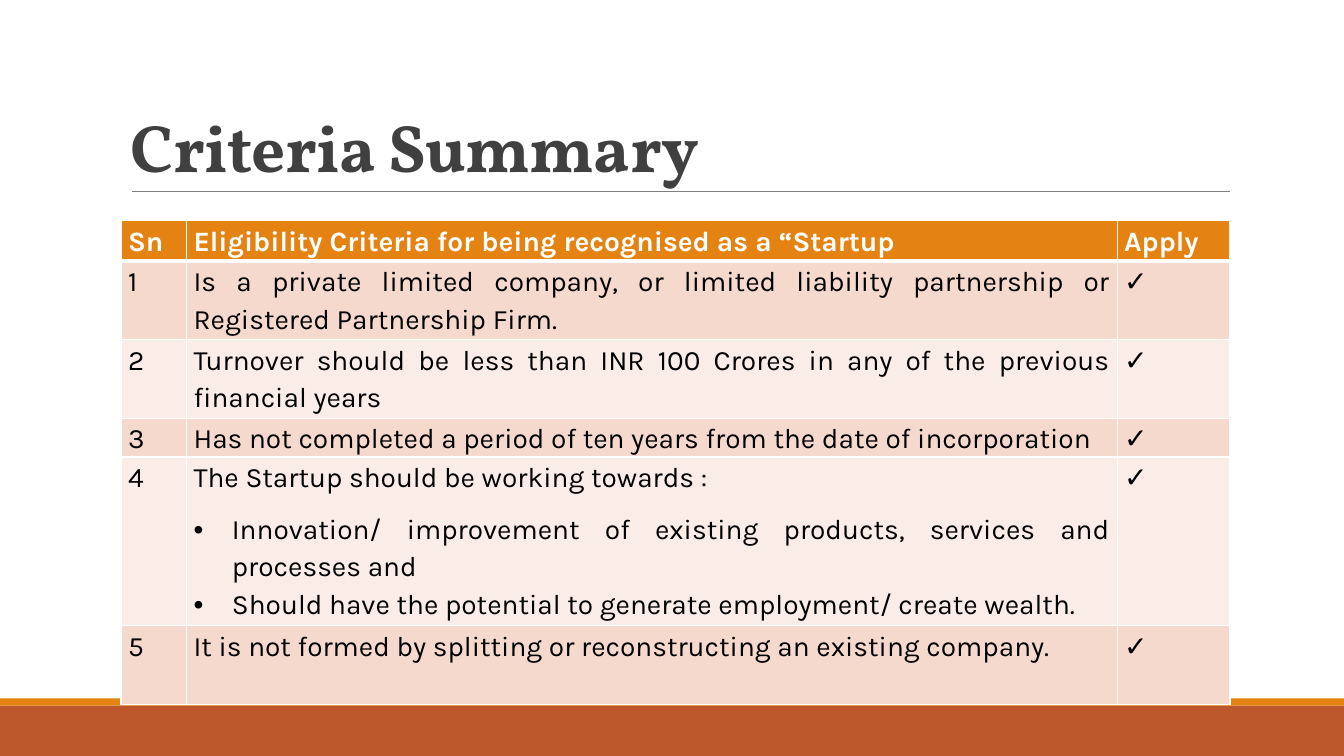
from lxml import etree
from pptx import Presentation
from pptx.dml.color import RGBColor
from pptx.enum.shapes import MSO_CONNECTOR, MSO_SHAPE
from pptx.enum.text import MSO_ANCHOR, PP_ALIGN
from pptx.oxml.ns import qn
from pptx.util import Inches, Pt

# Slide grid, in inches
WIDTH, HEIGHT = 13.33, 7.5
LEFT, CONTENT_WIDTH = 1.2, 11
TITLE_TOP, TITLE_HEIGHT = 0.31, 1.59
TABLE_TOP = 2.19
FOOTER_HEIGHT, STRIP_HEIGHT = 0.57, 0.07
COLUMN_WIDTHS = [0.65, 9.23, 1.12]
ROW_HEIGHTS = [0.4, 0.78, 0.78, 0.38, 1.5, 0.78]
CELL_MARGIN, BULLET_INDENT = 0.07, 0.38

# Border widths, in points
THIN, THICK = 1, 3

WHITE = RGBColor(0xFF, 0xFF, 0xFF)
BLACK = RGBColor(0x00, 0x00, 0x00)
GREY = RGBColor(0x80, 0x80, 0x80)
CHARCOAL = RGBColor(0x40, 0x40, 0x40)
RUST = RGBColor(0xBD, 0x58, 0x2C)
ORANGE = RGBColor(0xE4, 0x83, 0x12)
PEACH = RGBColor(0xF5, 0xD9, 0xCC)
PALE = RGBColor(0xFA, 0xED, 0xE7)

HEADINGS = ["Sn", "Eligibility Criteria for being recognised as a “Startup", "Apply"]
# Each criterion: its statement, then any bullets below it
CRITERIA = [
    ["Is a private limited company, or limited liability partnership or "
     "Registered Partnership Firm."],
    ["Turnover should be less than INR 100 Crores in any of the previous financial years"],
    ["Has not completed a period of ten years from the date of incorporation"],
    ["The Startup should be working towards :",
     "Innovation/ improvement of existing products, services and processes and ",
     "Should have the potential to generate employment/ create wealth. "],
    ["It is not formed by splitting or reconstructing an existing company."],
]


def write(para, text, *, font="Karla", size=20, color=BLACK, bold=False,
          align=PP_ALIGN.JUSTIFY, spacing=1.15, after=10, tracking=0):
    para.alignment, para.line_spacing = align, spacing
    para.space_before, para.space_after = Pt(0), Pt(after)
    span = para.add_run()
    span.text = text
    span.font.name, span.font.size, span.font.bold = font, Pt(size), bold
    span.font.color.rgb = color
    span.font._element.set("spc", str(round(tracking * 100)))


def add_bullet(para):
    props = para._p.get_or_add_pPr()
    props.set("marL", str(Inches(BULLET_INDENT)))
    props.set("indent", str(-Inches(BULLET_INDENT)))
    etree.SubElement(props, qn("a:buFont")).set("typeface", "Arial")
    etree.SubElement(props, qn("a:buChar")).set("char", "•")


def add_borders(cell, top, bottom):
    """Draw white borders: thin at the sides, top and bottom as given."""
    props = cell._tc.get_or_add_tcPr()
    sides = {"a:lnL": THIN, "a:lnR": THIN, "a:lnT": top, "a:lnB": bottom}
    for place, (tag, width) in enumerate(sides.items()):
        line = etree.Element(qn(tag), w=str(Pt(width)))
        fill = etree.SubElement(line, qn("a:solidFill"))
        etree.SubElement(fill, qn("a:srgbClr")).set("val", str(WHITE))
        props.insert(place, line)  # borders must precede the cell's fill


def add_band(page, top, height, color):
    """Plain band across the whole slide."""
    band = page.shapes.add_shape(MSO_SHAPE.RECTANGLE, 0, Inches(top),
                                 Inches(WIDTH), Inches(height))
    band.shadow.inherit = False
    band.fill.solid()
    band.fill.fore_color.rgb = color
    band.line.fill.background()


def add_footer(page, top, height):
    """Rust band with a thin orange strip above it."""
    add_band(page, top + STRIP_HEIGHT, height - STRIP_HEIGHT, RUST)
    add_band(page, top, STRIP_HEIGHT, ORANGE)


def add_title(page, text, left, top, width, height):
    """Bottom-anchored title with a thin rule below it."""
    base = Inches(top + height)
    rule = page.shapes.add_connector(MSO_CONNECTOR.STRAIGHT, Inches(left + 0.11), base,
                                     Inches(left + width), base)
    rule.line.color.rgb, rule.line.width = GREY, Pt(0.5)
    etree.SubElement(rule._element.spPr, qn("a:effectLst"))

    box = page.shapes.add_textbox(Inches(left), Inches(top), Inches(width), Inches(height))
    frame = box.text_frame
    frame.word_wrap, frame.vertical_anchor = True, MSO_ANCHOR.BOTTOM
    write(frame.paragraphs[0], text, font="Vollkorn", size=48, color=CHARCOAL, bold=True,
          align=PP_ALIGN.LEFT, spacing=0.85, after=0, tracking=-0.5)


def fill_cell(cell, lines, fill, **style):
    """Write a statement, with any further lines as one bullet list."""
    cell.margin_left = cell.margin_right = Inches(CELL_MARGIN)
    cell.margin_top = cell.margin_bottom = 0
    cell.fill.solid()
    cell.fill.fore_color.rgb = fill
    statement, *bullets = lines
    frame = cell.text_frame
    write(frame.paragraphs[0], statement, **style)
    for number, bullet in enumerate(bullets, 1):
        para = frame.add_paragraph()
        write(para, bullet, after=10 if number == len(bullets) else 0, **style)
        add_bullet(para)


def add_criteria_table(page, left, top, width):
    header = [[heading] for heading in HEADINGS]
    body = [[[str(number)], lines, ["✓"]] for number, lines in enumerate(CRITERIA, 1)]
    rows = [header, *body]
    table = page.shapes.add_table(len(rows), len(HEADINGS), Inches(left), Inches(top),
                                  Inches(width), Inches(sum(ROW_HEIGHTS))).table
    for column, column_width in zip(table.columns, COLUMN_WIDTHS):
        column.width = Inches(column_width)
    for row, height in zip(table.rows, ROW_HEIGHTS):
        row.height = Inches(height)

    for index, row in enumerate(rows):
        # Header row, then two alternating tints
        if index == 0:
            fill, style = ORANGE, {"color": WHITE, "bold": True}
        else:
            fill, style = PEACH if index % 2 else PALE, {}
        # The edge between the header and the first criterion is thicker
        top_border = THICK if index == 1 else THIN
        bottom_border = THICK if index == 0 else THIN
        for column, lines in enumerate(row):
            cell = table.cell(index, column)
            fill_cell(cell, lines, fill, **style)
            add_borders(cell, top_border, bottom_border)


def main():
    deck = Presentation()
    deck.slide_width, deck.slide_height = Inches(WIDTH), Inches(HEIGHT)
    page = deck.slides.add_slide(deck.slide_layouts[6])
    add_footer(page, HEIGHT - FOOTER_HEIGHT, FOOTER_HEIGHT)
    add_title(page, "Criteria Summary", LEFT, TITLE_TOP, CONTENT_WIDTH, TITLE_HEIGHT)
    add_criteria_table(page, LEFT, TABLE_TOP, CONTENT_WIDTH)
    deck.save("out.pptx")


if __name__ == "__main__":
    main()
